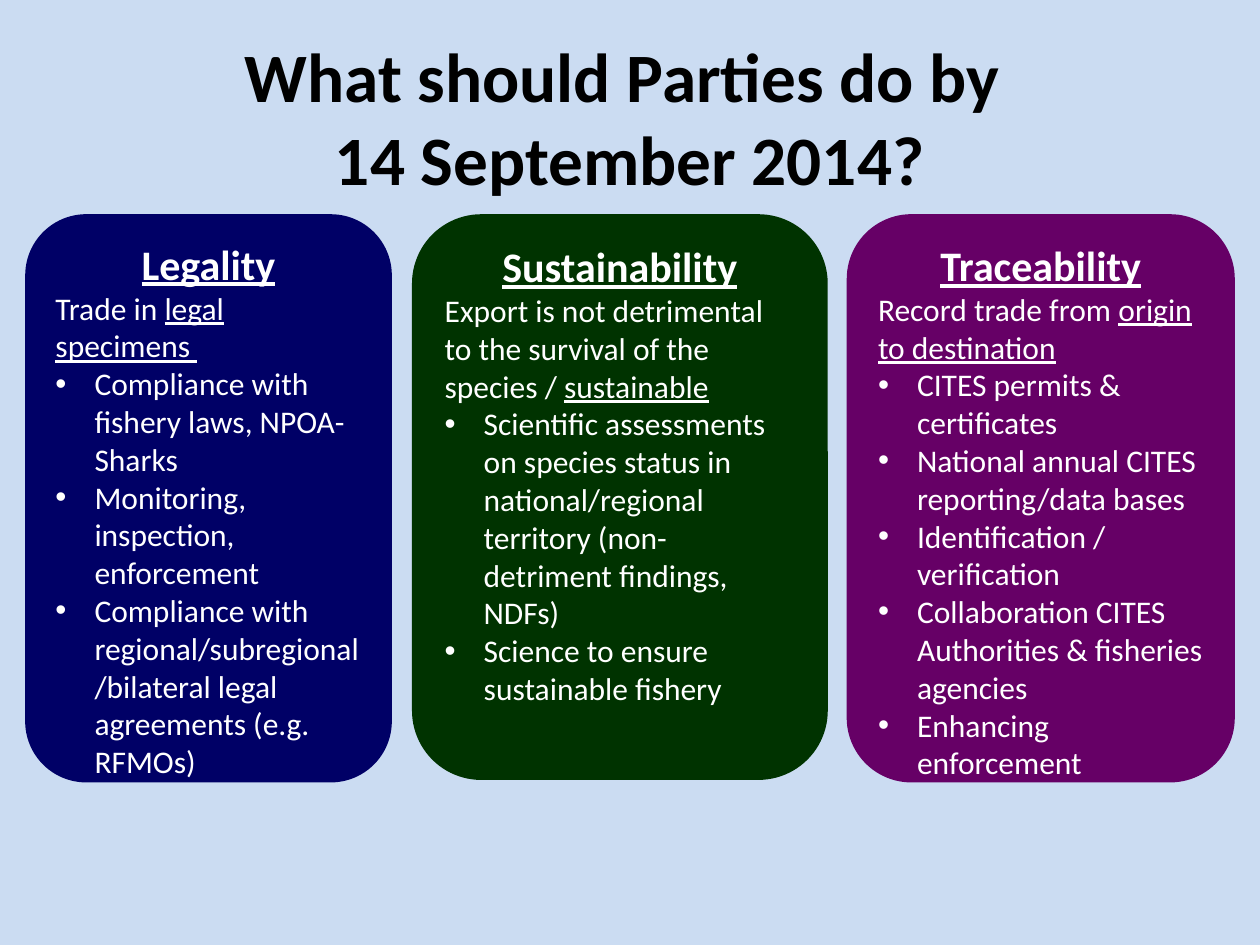
from lxml import etree
from pptx import Presentation
from pptx.dml.color import RGBColor
from pptx.enum import shapes, text
from pptx.oxml.ns import qn
from pptx.util import Inches, Pt

COLOURS = {
    "backdrop": "558ED5", "title": "000000", "body": "FFFFFF",
    "legality": "000066", "sustainability": "003300", "traceability": "660066",
}
FONT = "Calibri"
INDENT = Inches(0.31)
PILLAR_TOP = 1.7
PILLARS = [
    ("Legality", "legality", (0.2, 2.91, 4.51), "Trade in ", "legal specimens ", [
        "Compliance with fishery laws, NPOA-Sharks",
        "Monitoring, inspection, enforcement",
        "Compliance with regional/subregional/bilateral legal agreements (e.g. RFMOs)",
    ]),
    ("Sustainability", "sustainability", (3.27, 3.3, 4.49),
     "Export is not detrimental to the survival of the species / ", "sustainable", [
        "Scientific assessments on species status in national/regional territory "
        "(non-detriment findings, NDFs)",
        "Science to ensure sustainable fishery",
    ]),
    ("Traceability", "traceability", (6.72, 3.08, 4.51),
     "Record trade from ", "origin to destination", [
        "CITES permits & certificates",
        "National annual CITES reporting/data bases",
        "Identification / verification",
        "Collaboration CITES \vAuthorities & fisheries agencies",
        "Enhancing enforcement",
    ]),
]


def add_text(para, words, size=18, colour="body", bold=False, underline=False):
    for index, line in enumerate(words.split("\v")):
        if index:
            para.add_line_break()
        span = para.add_run()
        span.text = line
        span.font.name = FONT
        span.font.size = Pt(size)
        span.font.bold = bold
        span.font.underline = underline
        span.font.color.rgb = RGBColor.from_string(COLOURS[colour])


def add_bullet(para):
    properties = para._p.get_or_add_pPr()
    properties.set("marL", str(INDENT))
    properties.set("indent", str(-INDENT))
    etree.SubElement(properties, qn("a:buFont")).set("typeface", "Arial")
    etree.SubElement(properties, qn("a:buChar")).set("char", "•")


def add_panel(page, kind, box, colour):
    panel = page.shapes.add_shape(kind, *map(Inches, box))
    panel.shadow.inherit = False
    panel.fill.solid()
    panel.fill.fore_color.rgb = RGBColor.from_string(COLOURS[colour])
    panel.line.fill.background()
    return panel


def add_backdrop(page, box):
    panel = add_panel(page, shapes.MSO_SHAPE.RECTANGLE, box, "backdrop")
    tint = panel.fill._xPr.find(qn("a:solidFill"))[0]
    etree.SubElement(tint, qn("a:alpha")).set("val", "30000")


def add_title(page, box):
    frame = page.shapes.add_textbox(*map(Inches, box)).text_frame
    frame.word_wrap = True
    frame.vertical_anchor = text.MSO_ANCHOR.MIDDLE
    para = frame.paragraphs[0]
    para.alignment = text.PP_ALIGN.CENTER
    add_text(para, "What should Parties do by \v14 September 2014?",
             size=39.6, colour="title", bold=True)


def add_pillar(page, box, colour, heading, lead, key_phrase, points):
    panel = add_panel(page, shapes.MSO_SHAPE.ROUNDED_RECTANGLE, box, colour)
    frame = panel.text_frame
    frame.word_wrap = True
    frame.vertical_anchor = text.MSO_ANCHOR.TOP
    para = frame.paragraphs[0]
    para.alignment = text.PP_ALIGN.CENTER
    add_text(para, heading, size=24, bold=True, underline=True)
    para = frame.add_paragraph()
    para.alignment = text.PP_ALIGN.LEFT
    add_text(para, lead)
    add_text(para, key_phrase, underline=True)
    for point in points:
        para = frame.add_paragraph()
        para.alignment = text.PP_ALIGN.LEFT
        add_bullet(para)
        add_text(para, point)


def main():
    deck = Presentation()
    deck.slide_width, deck.slide_height = Inches(10), Inches(7.5)
    page = deck.slides.add_slide(deck.slide_layouts[6])
    add_backdrop(page, (0, 0, 10, 7.5))
    add_title(page, (0.5, 0.3, 9, 1.25))
    for heading, colour, (left, width, height), lead, key_phrase, points in PILLARS:
        add_pillar(page, (left, PILLAR_TOP, width, height), colour,
                   heading, lead, key_phrase, points)
    deck.save("out.pptx")


if __name__ == "__main__":
    main()
